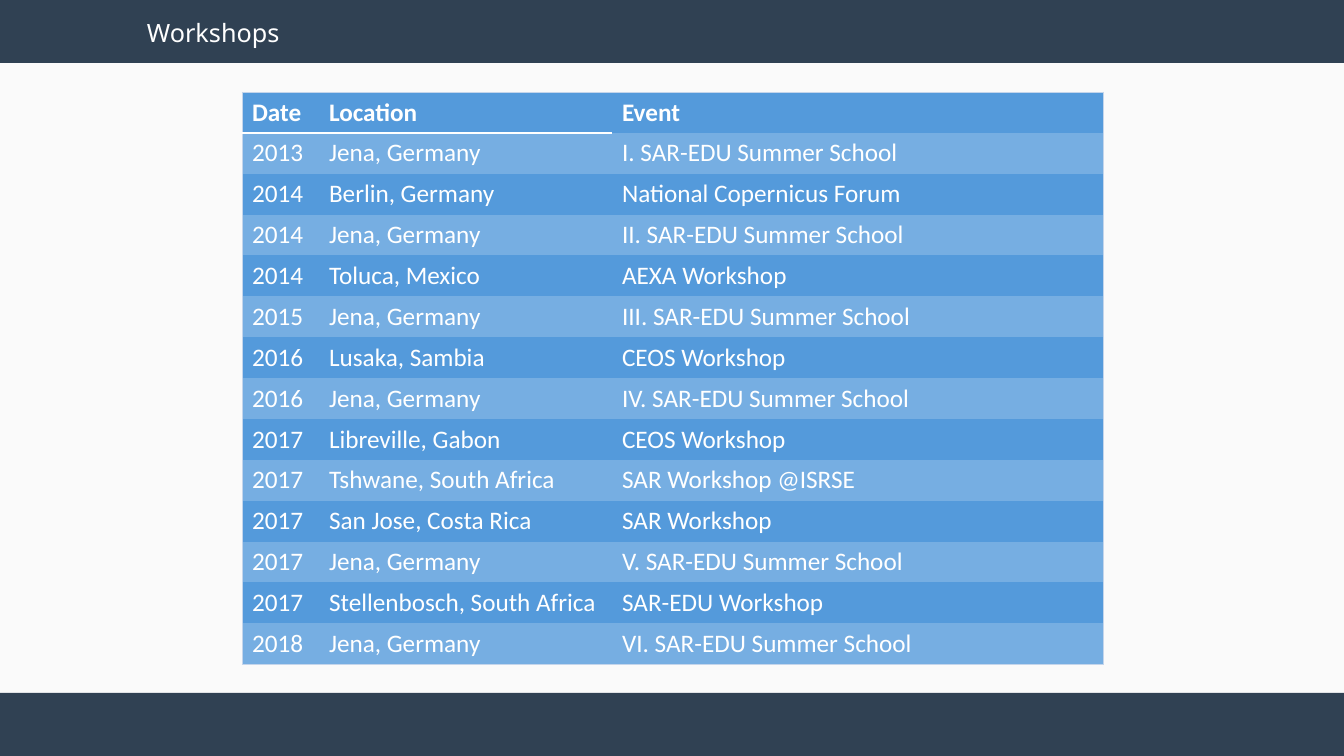
from lxml import etree
from pptx import Presentation
from pptx import util as u
from pptx.dml.color import RGBColor
from pptx.enum import shapes, text
from pptx.oxml import ns

PX = u.Inches(1) / 100.8
SLIDE_W, SLIDE_H, BAND_H = 1344, 756, 63
NO_GRID_STYLE = "{2D5ABB26-0587-4C30-8999-92F81FD0307C}"
COLORS = {
    "page": "FAFAFA",
    "band": "304153",
    "row": "549ADB",
    "row_light": "76AEE2",
    "frame": "C4D5EB",
    "white": "FFFFFF",
}
COLUMN_WIDTHS = [77, 293, 491]
WORKSHOPS = [
    ("Date", "Location", "Event"),
    ("2013", "Jena, Germany", "I. SAR-EDU Summer School"),
    ("2014", "Berlin, Germany", "National Copernicus Forum"),
    ("2014", "Jena, Germany", "II. SAR-EDU Summer School"),
    ("2014", "Toluca, Mexico", "AEXA Workshop"),
    ("2015", "Jena, Germany", "III. SAR-EDU Summer School"),
    ("2016", "Lusaka, Sambia", "CEOS Workshop"),
    ("2016", "Jena, Germany", "IV. SAR-EDU Summer School"),
    ("2017", "Libreville, Gabon", "CEOS Workshop"),
    ("2017", "Tshwane, South Africa", "SAR Workshop @ISRSE"),
    ("2017", "San Jose, Costa Rica", "SAR Workshop"),
    ("2017", "Jena, Germany", "V. SAR-EDU Summer School"),
    ("2017", "Stellenbosch, South Africa", "SAR-EDU Workshop"),
    ("2018", "Jena, Germany", "VI. SAR-EDU Summer School"),
]


def px(length):
    return u.Emu(round(length * PX))


def rgb(name):
    return RGBColor.from_string(COLORS[name])


def style_font(font, face, bold=False):
    font.name, font.size, font.bold = face, u.Pt(18), bold
    font.color.rgb = rgb("white")


def add_band(slide, box, color):
    band = slide.shapes.add_shape(shapes.MSO_SHAPE.RECTANGLE, *map(px, box))
    band.shadow.inherit = False
    band.fill.solid()
    band.fill.fore_color.rgb = rgb(color)
    band.line.fill.background()


def add_title(slide, box, wording):
    title = slide.shapes.add_textbox(*map(px, box))
    frame = title.text_frame
    frame.word_wrap = True
    frame.auto_size = text.MSO_AUTO_SIZE.SHAPE_TO_FIT_TEXT
    frame.text = wording
    style_font(frame.paragraphs[0].runs[0].font, "Noto Sans")


def add_border(cell, side, color, points):
    properties = cell._tc.get_or_add_tcPr()
    line = etree.SubElement(properties, ns.qn(f"a:ln{side}"), w=str(u.Pt(points)))
    fill = etree.SubElement(line, ns.qn("a:solidFill"))
    etree.SubElement(fill, ns.qn("a:srgbClr"), val=COLORS[color])


def add_workshop_table(slide, box, rows):
    table_frame = slide.shapes.add_table(len(rows), len(COLUMN_WIDTHS), *map(px, box))
    table = table_frame.table
    table.horz_banding = False
    table._tbl.tblPr.find(ns.qn("a:tableStyleId")).text = NO_GRID_STYLE
    for column, width in zip(table.columns, COLUMN_WIDTHS):
        column.width = px(width)
    last_row, last_column = len(rows) - 1, len(COLUMN_WIDTHS) - 1
    for r, row in enumerate(rows):
        for c, wording in enumerate(row):
            cell = table.cell(r, c)
            cell.text = wording
            style_font(cell.text_frame.paragraphs[0].runs[0].font, "Calibri", r == 0)
            if c == 0:
                add_border(cell, "L", "frame", 0.5)
            if c == last_column:
                add_border(cell, "R", "frame", 0.5)
            if r == 0:
                add_border(cell, "T", "frame", 0.5)
            if r == 0 and c < last_column:
                add_border(cell, "B", "white", 1.5)
            if r == last_row:
                add_border(cell, "B", "frame", 0.5)
            cell.fill.solid()
            cell.fill.fore_color.rgb = rgb("row_light" if r % 2 else "row")


def build_workshops_slide(deck):
    slide = deck.slides.add_slide(deck.slide_layouts[6])
    add_band(slide, (0, 0, SLIDE_W, SLIDE_H), "page")
    for top in (0, SLIDE_H - BAND_H):
        add_band(slide, (0, top, SLIDE_W, BAND_H), "band")
    add_workshop_table(slide, (242, 92, sum(COLUMN_WIDTHS), 572), WORKSHOPS)
    add_title(slide, (137, 12, 343, 40), "Workshops")


def main():
    deck = Presentation()
    deck.slide_width, deck.slide_height = px(SLIDE_W), px(SLIDE_H)
    build_workshops_slide(deck)
    deck.save("out.pptx")


if __name__ == "__main__":
    main()
